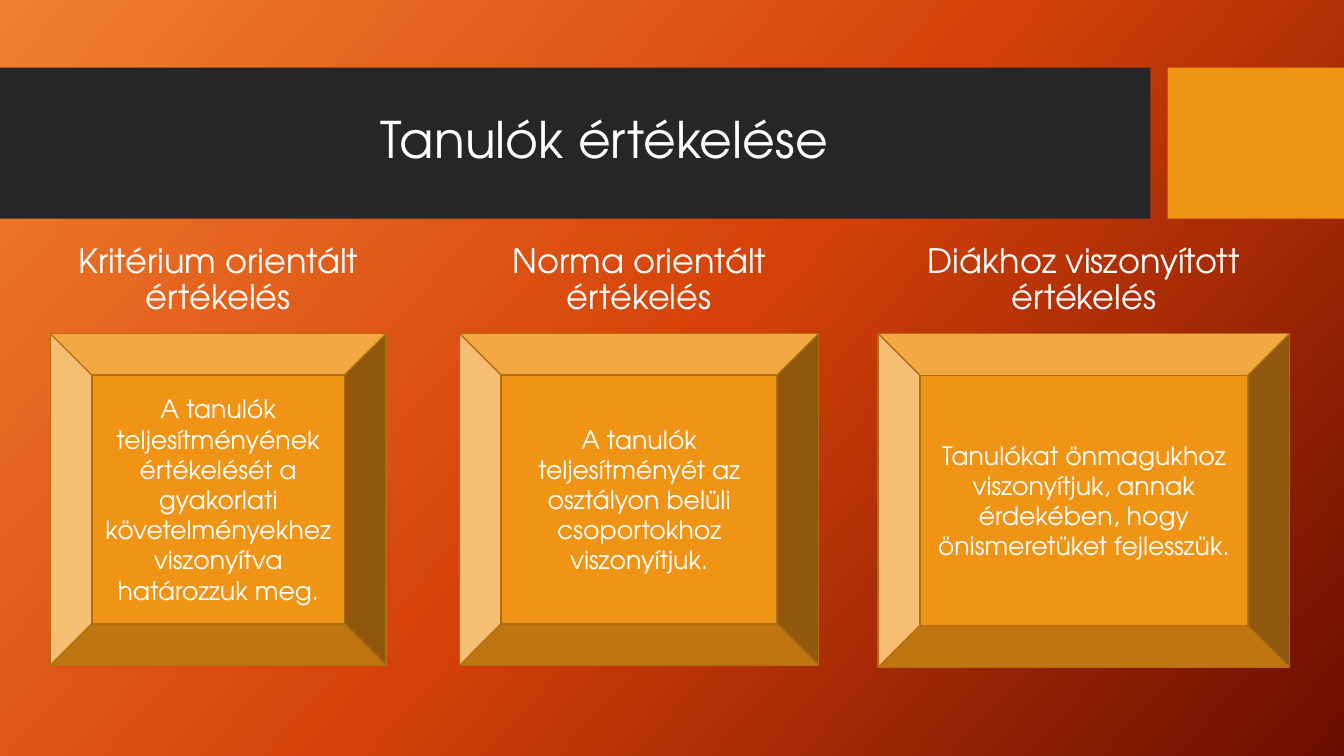
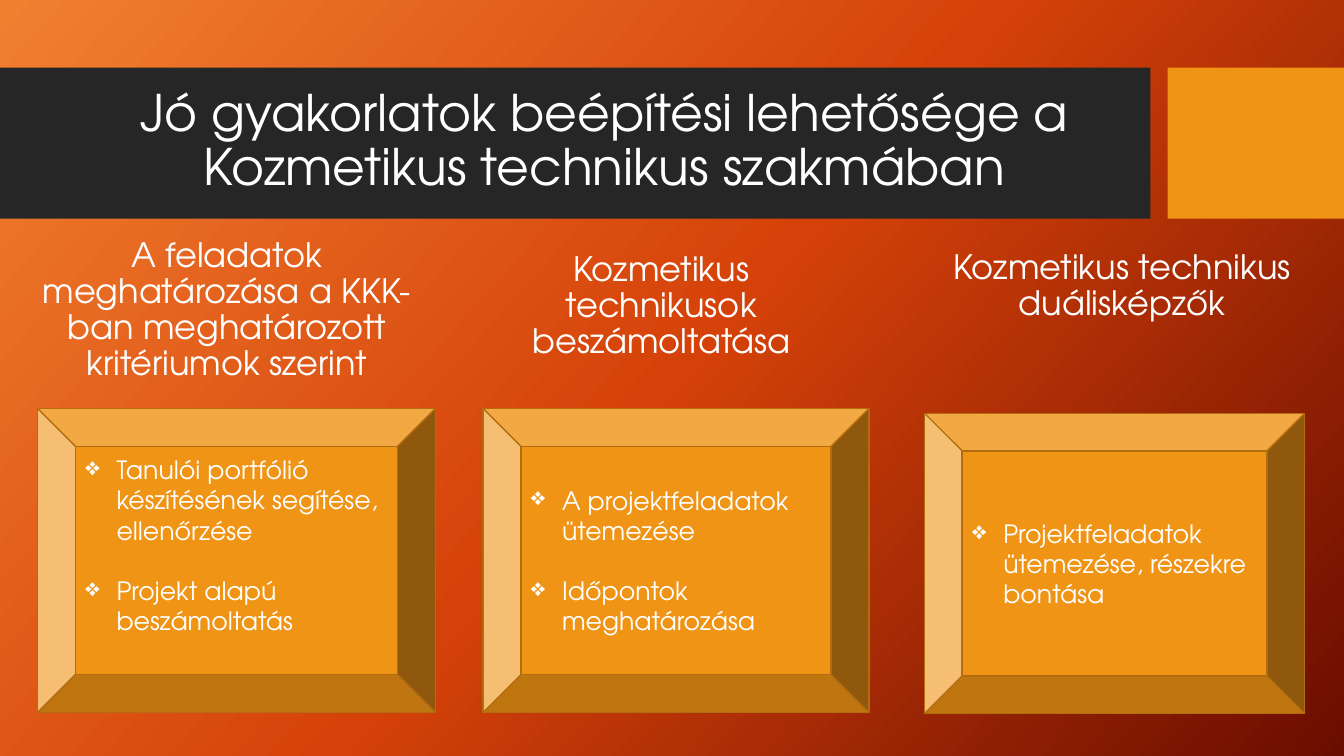
"""Build two slides that pair headings with bevelled panels."""
from pptx import Presentation
from pptx.dml.color import RGBColor
from pptx.enum.shapes import MSO_SHAPE as Shape
from pptx.enum.text import MSO_ANCHOR as Anchor, MSO_AUTO_SIZE as AutoSize, PP_ALIGN as Align
from pptx.oxml import parse_xml
from pptx.oxml.ns import nsdecls
from pptx.oxml.xmlchemy import OxmlElement
from pptx.util import Inches, Pt

FONT = "TeX Gyre Adventor"
COLORS = {
    "white": "FFFFFF",
    "band": "262626",
    "accent": "F09415",
    "edge": "B26D10",
}
BACKGROUND_STOPS = [(0, "F18031"), (50, "D54209"), (100, "6A0D00")]
BACKGROUND_ANGLE = 42
BAND_TOP, BAND_HEIGHT = 0.67, 1.5
BANDS = [(0, 11.41, "band"), (11.58, 1.75, "accent")]
TITLE_AREA = (0.73, 0.82, 10.53, 1.18)
BULLET_INDENT = 0.31
BULLET_GAP = 21.6

SLIDES = [
    {
        "title": "Tanulók értékelése",
        "headings": [
            ("Kritérium orientált értékelés", (0.56, 2.32, 3.21, 0.87)),
            ("Norma orientált értékelés", (4.5, 2.32, 3.68, 0.87)),
            ("Diákhoz viszonyított értékelés", (8.77, 2.32, 3.96, 0.87)),
        ],
        "panels": [
            {"area": (0.5, 3.31, 3.33, 3.29),
             "texts": ["A tanulók teljesítményének értékelését a gyakorlati "
                       "követelményekhez viszonyítva határozzuk meg."]},
            {"area": (4.56, 3.31, 3.56, 3.29),
             "texts": ["A tanulók teljesítményét az osztályon belüli "
                       "csoportokhoz viszonyítjuk."]},
            {"area": (8.71, 3.31, 4.08, 3.31),
             "texts": ["Tanulókat önmagukhoz viszonyítjuk, annak érdekében, "
                       "hogy önismeretüket fejlesszük."]},
        ],
    },
    {
        "title": "Jó gyakorlatok beépítési lehetősége a Kozmetikus technikus szakmában",
        "headings": [
            ("A feladatok meghatározása a KKK-ban meghatározott kritériumok szerint",
             (0.18, 2.36, 4.14, 1.49)),
            ("Kozmetikus technikusok beszámoltatása", (4.79, 2.24, 3.54, 1.39)),
            ("Kozmetikus technikus duálisképzők", (9.17, 2.47, 3.92, 0.78)),
        ],
        "panels": [
            {"area": (0.37, 4.05, 3.95, 3.02), "bulleted": True, "bottom_inset": 0.35,
             "texts": ["Tanulói portfólió készítésének segítése, ellenőrzése",
                       "Projekt alapú beszámoltatás"]},
            {"area": (4.79, 4.05, 3.83, 3.02), "bulleted": True,
             "texts": ["A projektfeladatok ütemezése", "Időpontok meghatározása"]},
            {"area": (9.17, 4.1, 3.77, 2.98), "bulleted": True,
             "texts": ["Projektfeladatok ütemezése, részekre bontása"]},
        ],
    },
]


def color(name):
    """Return the named colour."""
    return RGBColor.from_string(COLORS[name])


def inches(area):
    """Turn left, top, width and height into lengths."""
    return [Inches(value) for value in area]


def style_paragraph(para, size, align, line_spacing=1.0):
    """Set the shared font and the layout of a paragraph."""
    para.alignment = align
    para.line_spacing = line_spacing
    para.font.name = FONT
    para.font.size = Pt(size)
    para.font.color.rgb = color("white")


def add_bullet(para):
    """Give a paragraph a hanging diamond bullet."""
    properties = para._p.get_or_add_pPr()
    properties.set("marL", str(Inches(BULLET_INDENT)))
    properties.set("indent", str(-Inches(BULLET_INDENT)))
    bullet = OxmlElement("a:buChar")
    bullet.set("char", "❖")
    properties.append(bullet)


def set_background(page):
    """Fill the slide with the diagonal gradient."""
    stops = "".join(
        f'<a:gs pos="{percent * 1000}"><a:srgbClr val="{value}"/></a:gs>'
        for percent, value in BACKGROUND_STOPS
    )
    background = parse_xml(
        f'<p:bg {nsdecls("p", "a")}><p:bgPr><a:gradFill rotWithShape="1">'
        f'<a:gsLst>{stops}</a:gsLst><a:lin ang="{BACKGROUND_ANGLE * 60000}" scaled="0"/>'
        "</a:gradFill><a:effectLst/></p:bgPr></p:bg>"
    )
    page.element.cSld.insert(0, background)


def add_filled_shape(page, kind, area, fill):
    """Add a flat preset shape without a shadow."""
    shape = page.shapes.add_shape(kind, *inches(area))
    shape.shadow.inherit = False
    shape.fill.solid()
    shape.fill.fore_color.rgb = color(fill)
    return shape


def add_title(page, text):
    """Place the title in front of its two bands."""
    title = page.shapes.title
    title.left, title.top, title.width, title.height = inches(TITLE_AREA)
    frame = title.text_frame
    frame.text = text
    frame.word_wrap = True
    frame.auto_size = AutoSize.NONE
    frame.vertical_anchor = Anchor.MIDDLE
    style_paragraph(frame.paragraphs[0], 36, Align.CENTER, 0.9)
    for left, width, fill in BANDS:
        area = (left, BAND_TOP, width, BAND_HEIGHT)
        band = add_filled_shape(page, Shape.RECTANGLE, area, fill)
        band.line.fill.background()
        title.element.addprevious(band.element)


def add_heading(page, text, area):
    """Add a bottom-anchored column heading."""
    frame = page.shapes.add_textbox(*inches(area)).text_frame
    frame.text = text
    frame.word_wrap = True
    frame.vertical_anchor = Anchor.BOTTOM
    style_paragraph(frame.paragraphs[0], 24, Align.CENTER, 0.9)


def add_panel(page, area, texts, bulleted=False, bottom_inset=0.05):
    """Add a bevelled panel with centred text or a bullet list."""
    panel = add_filled_shape(page, Shape.BEVEL, area, "accent")
    panel.line.color.rgb = color("edge")
    panel.line.width = Pt(1)
    frame = panel.text_frame
    frame.word_wrap = True
    frame.vertical_anchor = Anchor.MIDDLE
    frame.margin_bottom = Inches(bottom_inset)
    for index, text in enumerate(texts):
        para = frame.add_paragraph() if index else frame.paragraphs[0]
        para.text = text
        if index:
            para.space_before = Pt(BULLET_GAP)
        if bulleted:
            add_bullet(para)
        style_paragraph(para, 18, Align.LEFT if bulleted else Align.CENTER)


def main():
    """Build and save the deck."""
    deck = Presentation()
    deck.slide_width, deck.slide_height = Inches(13.33), Inches(7.5)
    title_only = deck.slide_layouts.get_by_name("Title Only")
    for content in SLIDES:
        page = deck.slides.add_slide(title_only)
        set_background(page)
        add_title(page, content["title"])
        for text, area in content["headings"]:
            add_heading(page, text, area)
        for panel in content["panels"]:
            add_panel(page, **panel)
    deck.save("out.pptx")


if __name__ == "__main__":
    main()
